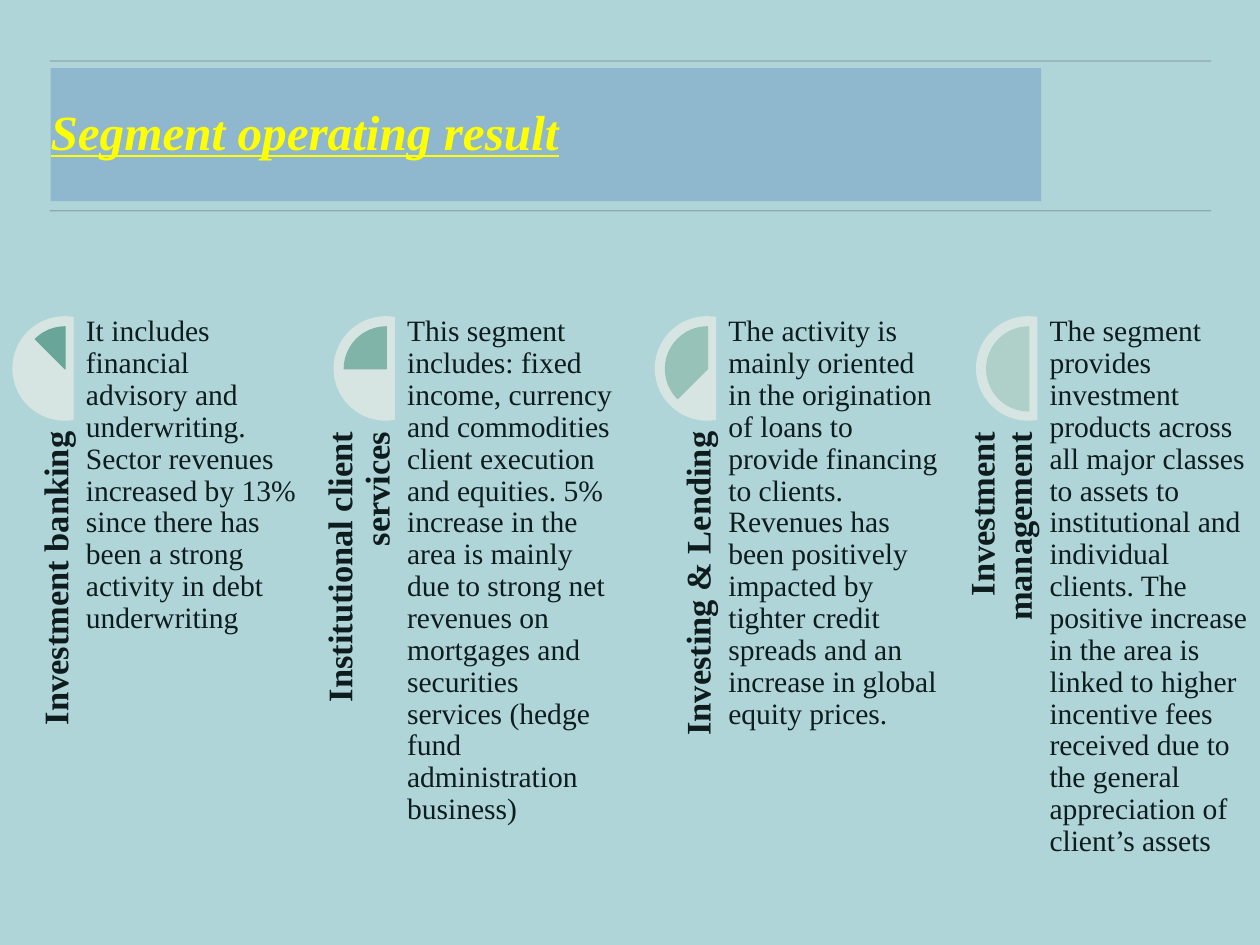
from lxml.etree import SubElement
from pptx import Presentation
from pptx.dml.color import RGBColor
from pptx.enum.shapes import MSO_CONNECTOR, MSO_SHAPE
from pptx.enum.text import MSO_ANCHOR, MSO_AUTO_SIZE, PP_ALIGN
from pptx.oxml.ns import qn
from pptx.util import Inches, Pt

COLORS = {
    "back": "AFD5D9", "band": "8FB8CE", "title": "FFFF00",
    "rule": "444444", "text": "0F1C1D", "disc": "D6E5E1",
}
FACE = "Times New Roman"
TITLE = {"name": FACE, "size": Pt(40), "bold": True, "italic": True, "underline": True}
LABEL = {"name": FACE, "size": Pt(28), "bold": True}
BODY = {"name": FACE, "size": Pt(24), "bold": False}
FRAME = {
    "margin_left": 0, "margin_right": 0, "margin_top": 0, "margin_bottom": 0,
    "word_wrap": True, "auto_size": MSO_AUTO_SIZE.NONE,
}
PITCH = 14.5 / 4
SEGMENTS = [
    ("Investment banking", "69A598",
     "It includes financial advisory and underwriting. Sector revenues increased "
     "by 13% since there has been a strong activity in debt underwriting"),
    ("Institutional client services", "80B4A8",
     "This segment includes: fixed income, currency and commodities client "
     "execution and equities. 5% increase in the area is mainly due to strong net "
     "revenues on mortgages and securities services (hedge fund administration "
     "business)"),
    ("Investing & Lending", "97C2B8",
     "The activity is mainly oriented in the origination of loans to provide "
     "financing to clients. Revenues has been positively impacted by tighter "
     "credit spreads and an increase in global equity prices."),
    ("Investment management", "AFD0C8",
     "The segment provides investment products across all major classes to assets "
     "to institutional and individual clients. The positive increase in the area "
     "is linked to higher incentive fees received due to the general appreciation "
     "of client’s assets"),
]


def apply(item, style):
    for key, value in style.items():
        setattr(item, key, value)


def paint(fill, color):
    fill.solid()
    fill.fore_color.rgb = RGBColor.from_string(color)


def place(shape, *box):
    sides = ("left", "top", "width", "height")
    apply(shape, {side: Inches(size) for side, size in zip(sides, box)})


def write(shape, text, style, color, align, anchor):
    frame = shape.text_frame
    apply(frame, FRAME)
    frame.vertical_anchor = anchor
    para = frame.paragraphs[0]
    apply(para, {"alignment": align, "line_spacing": 0.9, "space_before": Pt(0)})
    run = para.add_run()
    run.text = text
    apply(run.font, style)
    run.font.color.rgb = RGBColor.from_string(color)


def add_title(slide, text):
    title = slide.shapes.title
    place(title, 0.57, 0.77, 11.18, 1.5)
    paint(title.fill, COLORS["band"])
    write(title, text, TITLE, COLORS["title"], PP_ALIGN.LEFT, MSO_ANCHOR.MIDDLE)


def add_rule(slide, top):
    rule = slide.shapes.add_connector(
        MSO_CONNECTOR.STRAIGHT, Inches(0.56), Inches(top), Inches(13.67), Inches(top))
    rule.line.width = Pt(1)
    paint(rule.line.fill, COLORS["rule"])
    props = rule._element.spPr
    tint = props.find(".//" + qn("a:srgbClr"))
    SubElement(tint, qn("a:alpha"), val="30000")
    SubElement(props, qn("a:effectLst"))


def add_arc(slide, kind, left, top, size, angles, color):
    arc = slide.shapes.add_shape(
        kind, Inches(left), Inches(top), Inches(size), Inches(size))
    arc.shadow.inherit = False
    for spot, angle in enumerate(angles):
        arc.adjustments[spot] = angle * 0.6
    paint(arc.fill, color)
    arc.line.fill.background()
    return arc


def add_text(slide, box, text, style, align, anchor, turn=0):
    area = slide.shapes.add_textbox(*map(Inches, box))
    area.rotation = turn
    write(area, text, style, COLORS["text"], align, anchor)


def add_segment(slide, index, name, color, text):
    left = 0.14 + index * PITCH
    add_arc(slide, MSO_SHAPE.CHORD, left, 3.57, 1.18, (80, 280), COLORS["disc"])
    pie = add_arc(slide, MSO_SHAPE.PIE, left + 0.12, 3.69, 0.95,
                  (225 - 45 * index, 270), color)
    paint(pie.line.fill, color)
    pie.line.width = Pt(1)
    add_text(slide, (left - 1.36, 6.24, 3.44, 0.71), name, LABEL,
             PP_ALIGN.RIGHT, MSO_ANCHOR.BOTTOM, 270)
    add_text(slide, (left + 0.83, 3.57, 2.37, 4.74), text, BODY,
             PP_ALIGN.LEFT, MSO_ANCHOR.TOP)


def main():
    deck = Presentation()
    deck.slide_width, deck.slide_height = Inches(14.22), Inches(10.67)
    slide = deck.slides.add_slide(deck.slide_layouts[5])
    paint(slide.background.fill, COLORS["back"])
    for top in (0.69, 2.38):
        add_rule(slide, top)
    add_title(slide, "Segment operating result")
    for index, segment in enumerate(SEGMENTS):
        add_segment(slide, index, *segment)
    deck.save("out.pptx")


if __name__ == "__main__":
    main()
